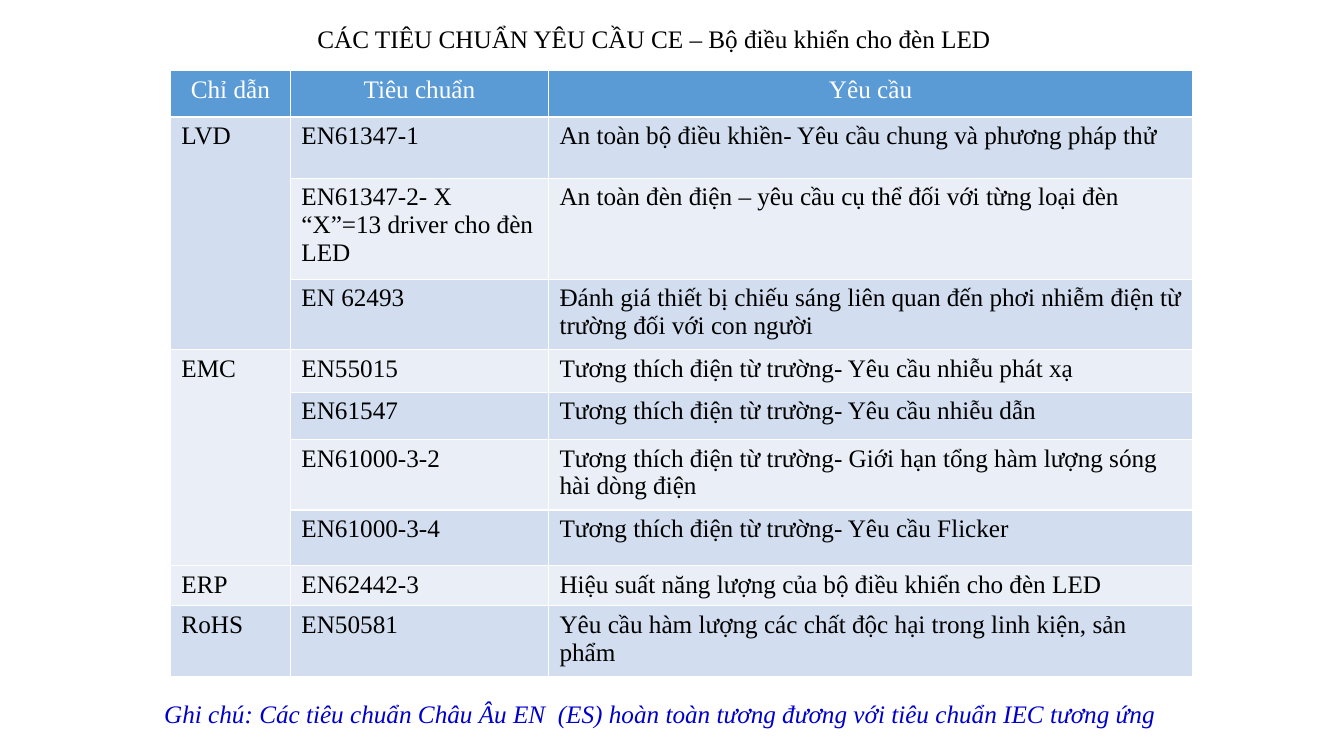
from pptx import Presentation, util as u
from pptx.dml.color import RGBColor
from pptx.enum import text

WHITE = RGBColor(0xFF, 0xFF, 0xFF)
BLACK = RGBColor(0x00, 0x00, 0x00)
NOTE_BLUE = RGBColor(0x00, 0x00, 0xCC)
HEADER_BLUE = RGBColor(0x5B, 0x9B, 0xD5)
BANDS = [RGBColor(0xD2, 0xDE, 0xEF), RGBColor(0xEA, 0xEF, 0xF7)]

COLUMN_WIDTHS = [1.19, 2.56, 6.39]
ROW_HEIGHTS = [0.46, 0.61, 0.99, 0.7, 0.42, 0.47, 0.7, 0.55, 0.4, 0.7]
HEADER = ("Chỉ dẫn", "Tiêu chuẩn", "Yêu cầu")

# Each directive with its standards and their requirements
DIRECTIVES = {
    "LVD": [
        ("EN61347-1", "An toàn bộ điều khiền- Yêu cầu chung và phương pháp thử"),
        ("EN61347-2- X\n“X”=13 driver cho đèn LED",
         "An toàn đèn điện – yêu cầu cụ thể đối với từng loại đèn"),
        ("EN 62493",
         "Đánh giá thiết bị chiếu sáng liên quan đến phơi nhiễm điện từ trường đối với con người"),
    ],
    "EMC": [
        ("EN55015", "Tương thích điện từ trường- Yêu cầu nhiễu phát xạ"),
        ("EN61547", "Tương thích điện từ trường- Yêu cầu nhiễu dẫn"),
        ("EN61000-3-2",
         "Tương thích điện từ trường- Giới hạn tổng hàm lượng sóng hài dòng điện"),
        ("EN61000-3-4", "Tương thích điện từ trường- Yêu cầu Flicker"),
    ],
    "ERP": [("EN62442-3", "Hiệu suất năng lượng của bộ điều khiển cho đèn LED")],
    "RoHS": [("EN50581", "Yêu cầu hàm lượng các chất độc hại trong linh kiện, sản phẩm")],
}


def write(frame, content, color=BLACK, italic=False, align=text.PP_ALIGN.LEFT):
    frame.word_wrap = True
    frame.text = content
    for para in frame.paragraphs:
        para.alignment = align
        for span in para.runs:
            span.font.name = "Times New Roman"
            span.font.size = u.Pt(18)
            span.font.bold = False
            span.font.italic = italic
            span.font.color.rgb = color


deck = Presentation()
deck.slide_width, deck.slide_height = u.Inches(13.33), u.Inches(7.5)
page = deck.slides.add_slide(deck.slide_layouts[6])

# Title above the table and note below it
title = page.shapes.add_textbox(*map(u.Inches, (3.05, 0.18, 7.83, 0.4)))
write(title.text_frame, "CÁC TIÊU CHUẨN YÊU CẦU CE – Bộ điều khiển cho đèn LED")
note = page.shapes.add_textbox(*map(u.Inches, (1.53, 6.88, 10.49, 0.4)))
write(note.text_frame,
      "Ghi chú: Các tiêu chuẩn Châu Âu EN  (ES) hoàn toàn tương đương với tiêu chuẩn IEC tương ứng",
      color=NOTE_BLUE, italic=True)

# Table grid; the default table style draws the white borders
table = page.shapes.add_table(
    len(ROW_HEIGHTS), len(COLUMN_WIDTHS), u.Inches(1.69), u.Inches(0.7),
    u.Inches(sum(COLUMN_WIDTHS)), u.Inches(sum(ROW_HEIGHTS))).table
for column, width in zip(table.columns, COLUMN_WIDTHS):
    column.width = u.Inches(width)
for row, height in zip(table.rows, ROW_HEIGHTS):
    row.height = u.Inches(height)

# Fill: header, then alternating bands
for row_index, row in enumerate(table.rows):
    for cell in row.cells:
        cell.fill.solid()
        cell.fill.fore_color.rgb = BANDS[(row_index - 1) % 2] if row_index else HEADER_BLUE
        cell.margin_left = cell.margin_right = u.Inches(0.11)

# Header text
for column_index, label in enumerate(HEADER):
    write(table.cell(0, column_index).text_frame, label,
          color=WHITE, align=text.PP_ALIGN.CENTER)

# Directives span the rows of their standards
first = 1
for directive, standards in DIRECTIVES.items():
    last = first + len(standards) - 1
    if last > first:
        table.cell(first, 0).merge(table.cell(last, 0))
    write(table.cell(first, 0).text_frame, directive)
    for row_index, entry in enumerate(standards, first):
        for column_index, content in enumerate(entry, 1):
            write(table.cell(row_index, column_index).text_frame, content)
    first = last + 1

deck.save("out.pptx")
